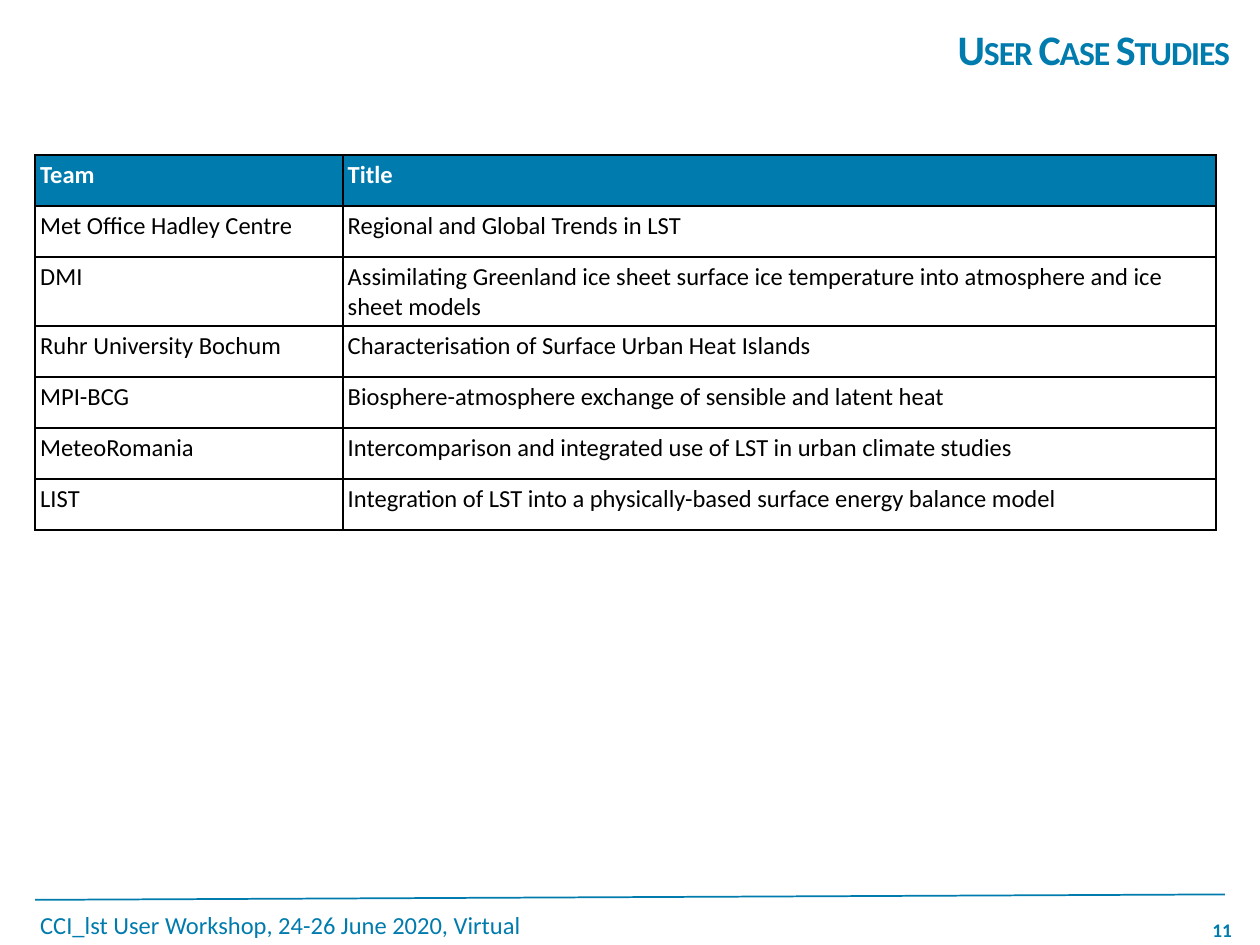
"""Build the User Case Studies slide with its table of teams and titles."""
from dataclasses import dataclass

from lxml import etree
from pptx import Presentation
from pptx.dml.color import RGBColor
from pptx.enum.shapes import MSO_CONNECTOR
from pptx.enum.text import MSO_ANCHOR, PP_ALIGN
from pptx.oxml.ns import qn
from pptx.util import Cm, Pt

STRAIGHT = MSO_CONNECTOR.STRAIGHT
TOP, MIDDLE = MSO_ANCHOR.TOP, MSO_ANCHOR.MIDDLE
LEFT, CENTER, RIGHT = PP_ALIGN.LEFT, PP_ALIGN.CENTER, PP_ALIGN.RIGHT

ROWS = [
    ("Team", "Title"),
    ("Met Office Hadley Centre", "Regional and Global Trends in LST"),
    ("DMI", "Assimilating Greenland ice sheet surface ice temperature "
            "into atmosphere and ice sheet models"),
    ("Ruhr University Bochum", "Characterisation of Surface Urban Heat Islands"),
    ("MPI-BCG", "Biosphere-atmosphere exchange of sensible and latent heat"),
    ("MeteoRomania", "Intercomparison and integrated use of LST in urban climate studies"),
    ("LIST", "Integration of LST into a physically-based surface energy balance model"),
]


@dataclass(frozen=True)
class Theme:
    font: str = "Calibri"
    accent: RGBColor = RGBColor(0x00, 0x7B, 0xAD)
    ink: RGBColor = RGBColor(0, 0, 0)
    paper: RGBColor = RGBColor(255, 255, 255)
    title: int = 24
    body: int = 14
    number: int = 11


class Deck:
    def __init__(self, prs, theme):
        self.theme = theme
        self.s = prs.slides.add_slide(prs.slide_layouts[6])

    def style(self, p, size, color, bold=False):
        for r in p.runs:
            r.font.name, r.font.size, r.font.bold = self.theme.font, Pt(size), bold
            r.font.color.rgb = color

    def inset(self, box, x, y):
        box.margin_left = box.margin_right = Cm(x)
        box.margin_top = box.margin_bottom = Cm(y)

    def text(self, text, place, size, bold=False, align=LEFT, anchor=TOP,
             inset=(0.1, 0.1), wrap=True):
        sp = self.s.shapes.add_textbox(*map(Cm, place))
        tf = sp.text_frame
        tf.text, tf.word_wrap, tf.vertical_anchor = text, wrap, anchor
        self.inset(tf, *inset)
        p = tf.paragraphs[0]
        p.alignment = align
        self.style(p, size, self.theme.accent, bold)
        return p

    def title(self, text, place):
        p = self.text(text, place, self.theme.title, True, RIGHT, MIDDLE, (0.25, 0.13))
        rpr = p.runs[0].font._element
        rpr.set("cap", "small")
        rpr.set("spc", "-60")

    def line(self, *ends):
        sp = self.s.shapes.add_connector(STRAIGHT, *map(Cm, ends))
        sp.line.color.rgb, sp.line.width = self.theme.accent, Pt(1)
        etree.SubElement(sp._element.spPr, qn("a:effectLst"))

    def border(self, cell):
        tcpr = cell._tc.get_or_add_tcPr()
        for side in ("lnL", "lnR", "lnT", "lnB"):
            ln = etree.SubElement(tcpr, qn(f"a:{side}"), w=str(Pt(1)))
            fill = etree.SubElement(ln, qn("a:solidFill"))
            etree.SubElement(fill, qn("a:srgbClr"), val=str(self.theme.ink))

    def cell(self, cell, text, header):
        cell.text = text
        self.inset(cell, 0.1, 0.1)
        self.border(cell)
        p = cell.text_frame.paragraphs[0]
        if header:
            cell.fill.solid()
            cell.fill.fore_color.rgb = self.theme.accent
        else:
            cell.fill.background()
            p.space_after = Pt(6)
        self.style(p, self.theme.body, self.theme.paper if header else self.theme.ink, header)

    def table(self, rows, left, top, widths, height):
        place = left, top, sum(widths), height * len(rows)
        table = self.s.shapes.add_table(len(rows), len(widths), *map(Cm, place)).table
        table.horz_banding = False
        for col, width in zip(table.columns, widths):
            col.width = Cm(width)
        for i, row in enumerate(rows):
            table.rows[i].height = Cm(height)
            for j, text in enumerate(row):
                self.cell(table.cell(i, j), text, i == 0)


def main():
    prs = Presentation()
    prs.slide_width, prs.slide_height = Cm(25.4), Cm(19.05)
    theme = Theme()
    deck = Deck(prs, theme)
    deck.line(0.71, 18.14, 24.69, 18.03)
    deck.text("11", (24.31, 18.52, 0.66, 0.48), theme.number, True, CENTER,
              inset=(0, 0), wrap=False)
    deck.text("CCI_lst User Workshop, 24-26 June 2020, Virtual",
              (0.71, 18.24, 12.4, 0.74), theme.body)
    deck.title("User Case Studies", (10.69, 0.13, 14, 1.7))
    deck.table(ROWS, 0.71, 3.12, (6.2, 17.6), 1.03)
    prs.save("out.pptx")


if __name__ == "__main__":
    main()
